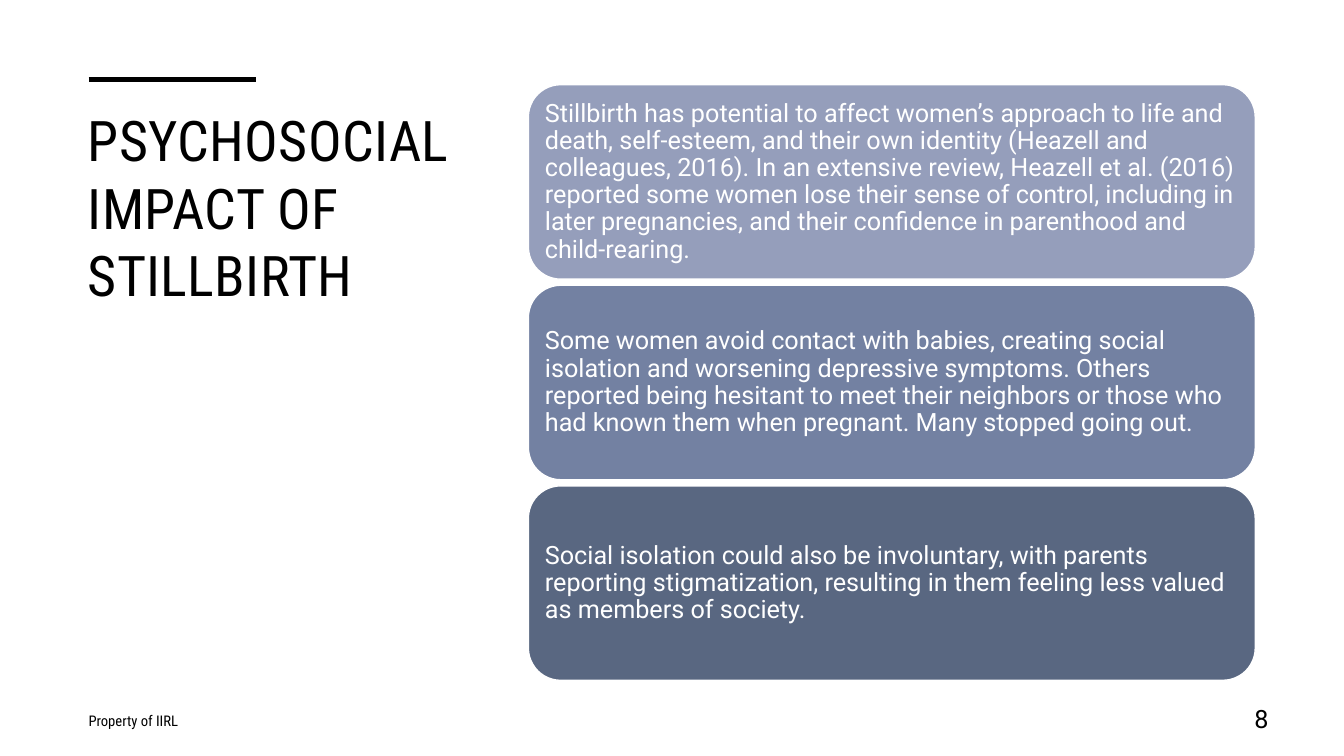
from pptx import Presentation
from pptx.dml.color import RGBColor
from pptx.enum.shapes import MSO_CONNECTOR, MSO_SHAPE
from pptx.enum.text import MSO_ANCHOR, MSO_AUTO_SIZE, PP_ALIGN
from pptx.oxml.ns import qn
from pptx.util import Inches, Pt
from lxml import etree

STRAIGHT = MSO_CONNECTOR.STRAIGHT
ROUNDED = MSO_SHAPE.ROUNDED_RECTANGLE
TOP, MIDDLE = MSO_ANCHOR.TOP, MSO_ANCHOR.MIDDLE
LEFT, RIGHT = PP_ALIGN.LEFT, PP_ALIGN.RIGHT
NO_FIT = MSO_AUTO_SIZE.NONE

COLORS = {"ink": "000000", "paper": "FFFFFF",
          "light": "959EBB", "medium": "7381A2", "dark": "596781"}

TITLE = {"name": "Roboto Condensed", "size": Pt(40), "bold": False}
CARD = {"name": "Roboto", "size": Pt(18)}
FOOTER = {"name": "Roboto Condensed", "size": Pt(10.5)}
NUMBER = {"name": "Roboto", "size": Pt(18)}

CARD_LEFT, CARD_TOP, CARD_WIDTH, CARD_HEIGHT = 5.24, 0.84, 7.21, 1.93
CARD_PITCH = 1.99
CARD_INSET = 0.07

CARDS = [
    ("light", "Stillbirth has potential to affect women’s approach to life and death, "
              "self-esteem, and their own identity (Heazell and colleagues, 2016). "
              "In an extensive review, Heazell et al. (2016) reported some women lose "
              "their sense of control, including in later pregnancies, and their "
              "confidence in parenthood and child-rearing."),
    ("medium", "Some women avoid contact with babies, creating social isolation and "
               "worsening depressive symptoms. Others reported being hesitant to meet "
               "their neighbors or those who had known them when pregnant. "
               "Many stopped going out."),
    ("dark", "Social isolation could also be involuntary, with parents reporting "
             "stigmatization, resulting in them feeling less valued as members of society."),
]


def rgb(key):
    return RGBColor.from_string(COLORS[key])


def write(sp, text, font, color, anchor=MIDDLE, align=LEFT, spacing=1.0):
    tf = sp.text_frame
    for key, value in {"word_wrap": True, "auto_size": NO_FIT,
                       "vertical_anchor": anchor}.items():
        setattr(tf, key, value)
    p = tf.paragraphs[0]
    p.alignment, p.line_spacing = align, spacing
    r = p.add_run()
    r.text = text
    for key, value in font.items():
        setattr(r.font, key, value)
    r.font.color.rgb = rgb(color)
    return r


def add_title(slide, text, box):
    sp = slide.shapes.title
    sp.left, sp.top, sp.width, sp.height = map(Inches, box)
    r = write(sp, text, TITLE, "ink", TOP)
    r.font._element.set("spc", "30")


def add_label(slide, text, box, font, **layout):
    sp = slide.shapes.add_textbox(*map(Inches, box))
    write(sp, text, font, "ink", **layout)


def add_card(slide, row, fill, text):
    top = CARD_TOP + row * CARD_PITCH
    sp = slide.shapes.add_shape(
        ROUNDED, *map(Inches, (CARD_LEFT, top, CARD_WIDTH, CARD_HEIGHT)))
    sp.shadow.inherit = False
    sp.fill.solid()
    sp.fill.fore_color.rgb = rgb(fill)
    sp.line.color.rgb = rgb("paper")
    sp.line.width = Pt(1)
    for side in ("left", "top", "right", "bottom"):
        setattr(sp.text_frame, f"margin_{side}", Inches(CARD_INSET))
    write(sp, text, CARD, "paper", spacing=0.9)


def add_rule(slide, left, right, y):
    line = slide.shapes.add_connector(STRAIGHT, *map(Inches, (left, y, right, y)))
    line.line.color.rgb = rgb("ink")
    line.line.width = Pt(3.5)
    etree.SubElement(line._element.spPr, qn("a:effectLst"))


def main():
    prs = Presentation()
    prs.slide_width, prs.slide_height = Inches(13.33), Inches(7.5)
    slide = prs.slides.add_slide(prs.slide_layouts[5])
    add_rule(slide, 0.88, 2.54, 0.79)
    add_title(slide, "PSYCHOSOCIAL IMPACT OF STILLBIRTH", (0.77, 1, 4.28, 4.35))
    for row, (fill, text) in enumerate(CARDS):
        add_card(slide, row, fill, text)
    add_label(slide, "Property of IIRL", (0.78, 6.95, 4.96, 0.4), FOOTER)
    add_label(slide, "8", (11.94, 6.95, 0.74, 0.4), NUMBER, align=RIGHT, spacing=0.9)
    prs.save("out.pptx")


if __name__ == "__main__":
    main()
